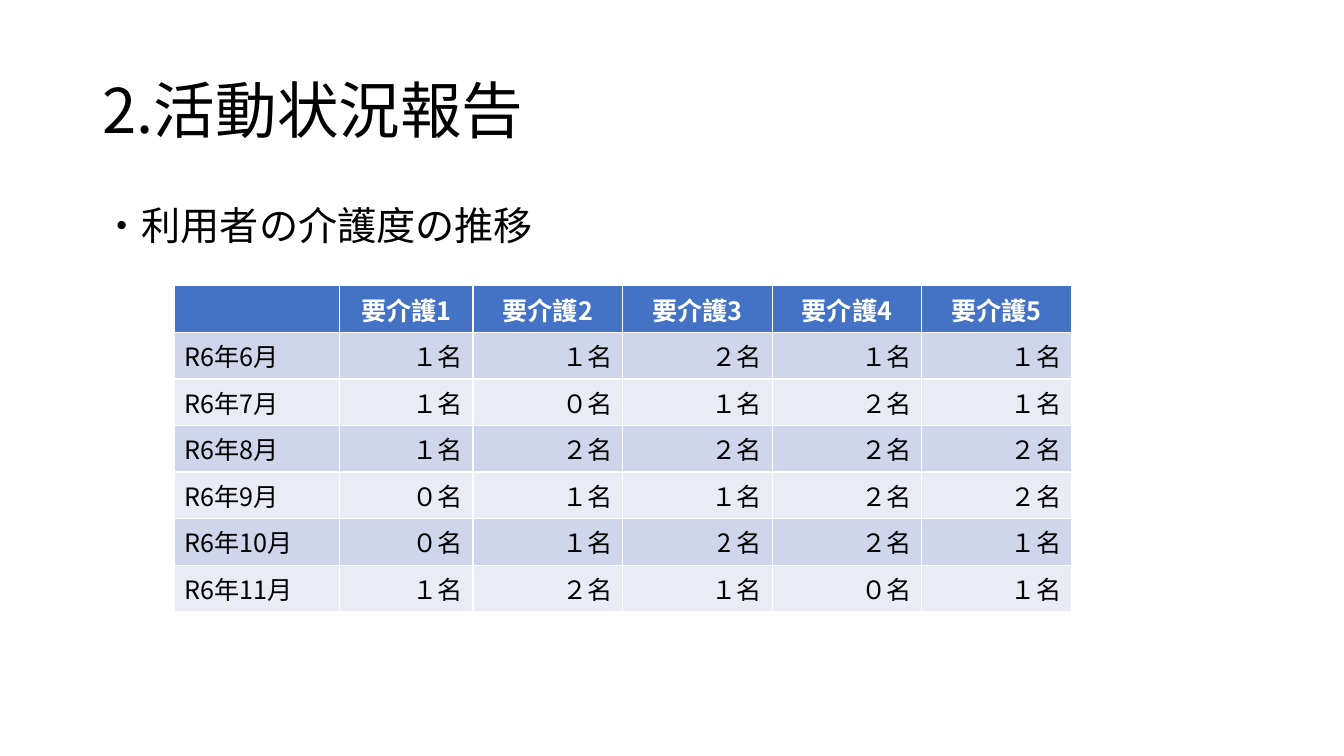
from pptx import Presentation
from pptx.dml.color import RGBColor
from pptx.enum import text as t
from pptx.oxml import xmlchemy as x
from pptx.util import Cm, Pt

# Content
HEADING = "2.活動状況報告"
TOPIC = "・利用者の介護度の推移"
LEVELS = ["", "要介護1", "要介護2", "要介護3", "要介護4", "要介護5"]
MONTHS = [
    ("R6年6月", "１名", "１名", "２名", "１名", "１名"),
    ("R6年7月", "１名", "０名", "１名", "２名", "１名"),
    ("R6年8月", "１名", "２名", "２名", "２名", "２名"),
    ("R6年9月", "０名", "１名", "１名", "２名", "２名"),
    ("R6年10月", "０名", "１名", "2 名", "２名", "１名"),
    ("R6年11月", "１名", "２名", "１名", "０名", "１名"),
]

# Look
FONT = "Noto Sans CJK JP"
BLACK, WHITE = "000000", "FFFFFF"
HEADER_FILL, BANDS = "4472C4", ("CFD5EA", "E9EBF5")
COLUMN_WIDTHS = [4.16, 3.36] + [3.77] * 4
ROW_HEIGHT = 1.03
LEFT, CENTER, RIGHT = t.PP_ALIGN.LEFT, t.PP_ALIGN.CENTER, t.PP_ALIGN.RIGHT


def color(value):
    return RGBColor.from_string(value)


def write(frame, words, size=18, ink=BLACK, bold=False, align=LEFT,
          spacing=None, before=None):
    line = frame.paragraphs[0]
    line.alignment, line.line_spacing = align, spacing
    if before is not None:
        line.space_before = Pt(before)
    run = line.add_run()
    run.text = words
    run.font.size, run.font.bold, run.font.name = Pt(size), bold, FONT
    run.font.color.rgb = color(ink)
    # East Asian glyphs take their own typeface entry
    east_asian = x.OxmlElement("a:ea")
    east_asian.set("typeface", FONT)
    run.font._element.find(x.qn("a:latin")).addnext(east_asian)
    return line


def place(holder, left, top, width, height):
    holder.left, holder.top = Cm(left), Cm(top)
    holder.width, holder.height = Cm(width), Cm(height)
    holder.text_frame.auto_size = t.MSO_AUTO_SIZE.NONE
    return holder.text_frame


deck = Presentation()
deck.slide_width, deck.slide_height = Cm(33.87), Cm(19.05)
slide = deck.slides.add_slide(deck.slide_layouts[1])

# Title
title = place(slide.shapes.title, 2.33, 1.01, 29.21, 3.68)
title.vertical_anchor = t.MSO_ANCHOR.MIDDLE
write(title, HEADING, size=44, spacing=0.9)

# Topic line, without the template's bullet and hanging indent
body = place(slide.placeholders[1], 2.33, 5.07, 29.21, 12.09)
topic = write(body, TOPIC, size=28, spacing=0.9, before=10)
properties = topic._p.get_or_add_pPr()
properties.set("marL", "0")
properties.set("indent", "0")
properties.append(x.OxmlElement("a:buNone"))

# Care level table
rows = [LEVELS, *MONTHS]
table = slide.shapes.add_table(
    len(rows), len(LEVELS), Cm(4.4), Cm(7.2),
    Cm(sum(COLUMN_WIDTHS)), Cm(ROW_HEIGHT * len(rows))).table
for column, width in zip(table.columns, COLUMN_WIDTHS):
    column.width = Cm(width)
for r, row in enumerate(rows):
    header = r == 0
    for c, words in enumerate(row):
        cell = table.cell(r, c)
        cell.fill.solid()
        cell.fill.fore_color.rgb = color(HEADER_FILL if header else BANDS[(r - 1) % 2])
        write(cell.text_frame, words, bold=header, ink=WHITE if header else BLACK,
              align=CENTER if header else RIGHT if c else LEFT)

deck.save("out.pptx")
